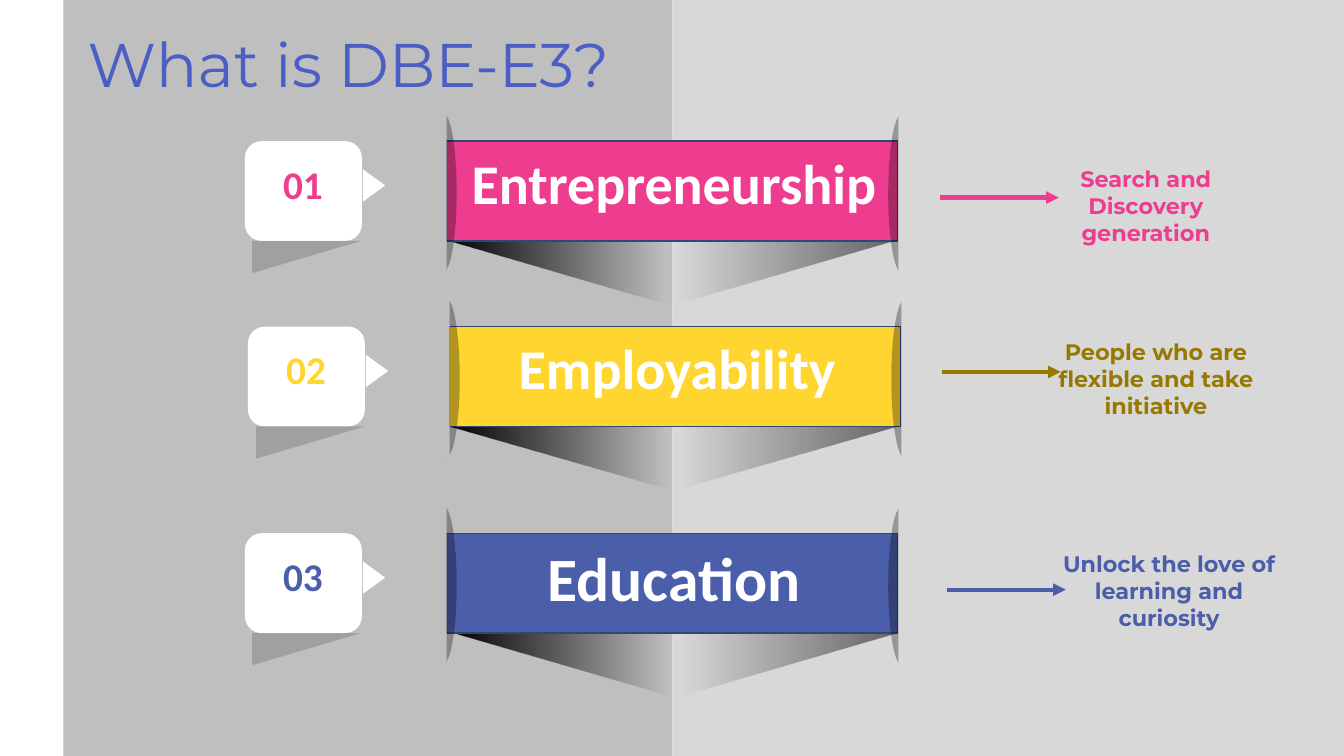
from lxml import etree
from pptx import Presentation
from pptx.dml.color import RGBColor
from pptx.enum.shapes import MSO_CONNECTOR, MSO_SHAPE
from pptx.enum.text import MSO_ANCHOR, PP_ALIGN
from pptx.oxml import parse_xml
from pptx.oxml.ns import nsdecls, qn
from pptx.util import Inches, Pt

COLORS = {
    "white": "FFFFFF", "black": "000000", "left": "BFBFBF", "right": "D8D8D8",
    "title": "4B5EC4", "outline": "36447C", "pink": "EE3D8F",
    "yellow": "FFD530", "olive": "987900", "blue": "4B5EAA",
}


def add_block(kind, x, y, w, h, color, alpha=None, rotation=0, flip=False):
    """Add an unlined, unshadowed shape; alpha is the opacity in percent."""
    sp = s.shapes.add_shape(kind, Inches(x), Inches(y), Inches(w), Inches(h))
    sp.shadow.inherit = False
    sp.fill.solid()
    sp.fill.fore_color.rgb = RGBColor.from_string(COLORS[color])
    sp.line.fill.background()
    sp.rotation = rotation
    if flip:
        sp._element.spPr.find(qn("a:xfrm")).set("flipH", "1")
    if alpha is not None:
        clr = sp._element.spPr.find(qn("a:solidFill"))[0]
        etree.SubElement(clr, qn("a:alpha")).set("val", str(alpha * 1000))
    return sp


def add_label(text, x, y, w, h, size, color, font="Calibri", bold=True,
              align=PP_ALIGN.CENTER):
    tf = s.shapes.add_textbox(Inches(x), Inches(y), Inches(w), Inches(h)).text_frame
    tf.word_wrap = True
    tf.text = text
    p = tf.paragraphs[0]
    p.alignment = align
    r = p.runs[0]
    r.font.name = font
    r.font.size = Pt(size)
    r.font.bold = bold
    r.font.color.rgb = RGBColor.from_string(COLORS[color])
    return tf


prs = Presentation()
prs.slide_width, prs.slide_height = Inches(13.33), Inches(7.5)
s = prs.slides.add_slide(prs.slide_layouts[6])

add_block(MSO_SHAPE.RECTANGLE, 0.63, 0, 6.04, 7.5, "left")
add_block(MSO_SHAPE.RECTANGLE, 6.67, 0, 6.66, 7.5, "right")

# number, name, size, color, banner x and y, shadow x, fold x
banners = [
    ("01", "Entrepreneurship", 40, "pink", 4.43, 1.4, 4.43, 2.5),
    ("02", "Employability", 40, "yellow", 4.46, 3.24, 4.45, 2.54),
    ("03", "Education", 44, "blue", 4.43, 5.29, 4.47, 2.5),
]
for number, name, size, color, x, y, shadow_x, fold_x in banners:
    # Shadow below the banner, fading towards its middle
    for i, opacity in enumerate((100, 54)):
        sp = add_block(MSO_SHAPE.RIGHT_TRIANGLE, shadow_x + i * 2.23, y + 0.99,
                       2.23, 0.64, "black", rotation=180, flip=i == 1)
        solid = sp._element.spPr.find(qn("a:solidFill"))
        stops = "".join(
            f'<a:gs pos="{pos * 1000}"><a:srgbClr val="{COLORS["black"]}">'
            f'<a:alpha val="{alpha * 1000}"/></a:srgbClr></a:gs>'
            for pos, alpha in ((0, 0), (3, 0), (100, opacity)))
        solid.getparent().replace(solid, parse_xml(
            f'<a:gradFill {nsdecls("a")} rotWithShape="1"><a:gsLst>{stops}</a:gsLst>'
            '<a:lin ang="0" scaled="0"/></a:gradFill>'))

    banner = add_block(MSO_SHAPE.RECTANGLE, x, y, 4.47, 0.99, color)
    banner.line.color.rgb = RGBColor.from_string(COLORS["outline"])
    banner.line.width = Pt(1)

    # Curled ends: the outer half of each ellipse is masked
    add_block(MSO_SHAPE.OVAL, x - 0.17, y - 0.28, 0.27, 1.58, "black", alpha=30)
    add_block(MSO_SHAPE.RECTANGLE, x - 0.51, y - 0.37, 0.51, 1.67, "left")
    add_block(MSO_SHAPE.OVAL, x + 4.38, y - 0.27, 0.27, 1.58, "black", alpha=30)
    add_block(MSO_SHAPE.RECTANGLE, x + 4.48, y - 0.28, 0.51, 1.67, "right")
    add_label(name, x + 0.13, y + 0.02, 4.25, 0.77, size, "white")

    # Number tag with pointer and fold
    add_block(MSO_SHAPE.ISOSCELES_TRIANGLE, x - 0.88, y + 0.33, 0.32, 0.22,
              "white", rotation=90)
    add_block(MSO_SHAPE.ROUNDED_RECTANGLE, x - 2, y, 1.16, 0.99, "white")
    add_label(number, x - 1.72, y + 0.14, 0.71, 0.57, 28, color, align=PP_ALIGN.LEFT)
    add_block(MSO_SHAPE.RIGHT_TRIANGLE, fold_x, y + 0.99, 1.08, 0.32, "black",
              alpha=16, rotation=180, flip=True)

tf = add_label("What is DBE-E3?", 0.77, 0.06, 12.56, 1.23, 44, "title",
               font="Montserrat", bold=False, align=PP_ALIGN.LEFT)
tf.vertical_anchor = MSO_ANCHOR.MIDDLE
tf.paragraphs[0].line_spacing = 0.9

# text, color, arrow x and y, text x, y and width
meanings = [
    ("Search and Discovery generation", "pink", 9.32, 1.96, 10.08, 1.59, 2.57),
    ("People who are flexible and take initiative", "olive",
     9.34, 3.69, 10.17, 3.31, 2.59),
    ("Unlock the love of learning and curiosity", "blue",
     9.39, 5.85, 10.44, 5.41, 2.31),
]
for text, color, arrow_x, arrow_y, x, y, w in meanings:
    arrow = s.shapes.add_connector(MSO_CONNECTOR.STRAIGHT, Inches(arrow_x),
                                   Inches(arrow_y), Inches(arrow_x + 1.18),
                                   Inches(arrow_y))
    arrow.line.color.rgb = RGBColor.from_string(COLORS[color])
    arrow.line.width = Pt(3)
    etree.SubElement(arrow.line._get_or_add_ln(), qn("a:tailEnd")).set("type", "triangle")
    etree.SubElement(arrow._element.spPr, qn("a:effectLst"))
    add_label(text, x, y, w, 0.91, 16, color, font="Montserrat")

prs.save("out.pptx")
